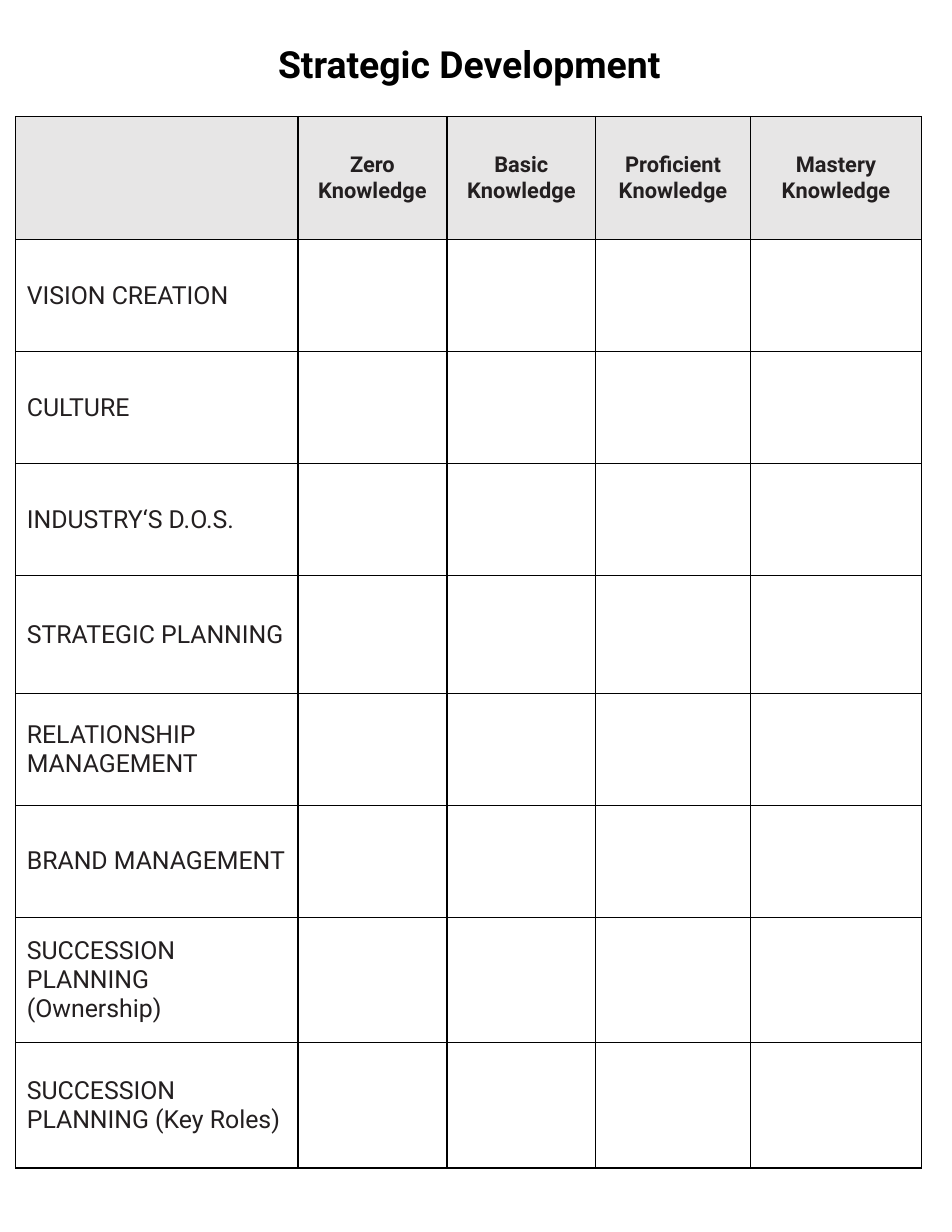
from dataclasses import dataclass

from lxml import etree
from pptx import Presentation
from pptx.dml.color import RGBColor
from pptx.enum.text import MSO_ANCHOR, PP_ALIGN
from pptx.oxml.ns import qn
from pptx.util import Inches, Pt

LEFT, CENTER = PP_ALIGN.LEFT, PP_ALIGN.CENTER
MIDDLE = MSO_ANCHOR.MIDDLE


@dataclass(frozen=True)
class Theme:
    font: str = "Roboto"
    black: str = "000000"
    ink: str = "231F20"
    head: str = "D0CECE"
    alpha: int = 50
    title: int = 24
    label: int = 14
    topic: int = 16
    rule: int = 1


THEME = Theme()
LEVELS = ["Zero", "Basic", "Proficient", "Mastery"]
TOPICS = [
    "VISION CREATION",
    "CULTURE",
    "INDUSTRY‘S D.O.S.",
    "STRATEGIC PLANNING",
    "RELATIONSHIP MANAGEMENT",
    "BRAND MANAGEMENT",
    "SUCCESSION PLANNING (Ownership)",
    "SUCCESSION PLANNING (Key Roles)",
]
COLS = [2.52, 1.33, 1.33, 1.38, 1.53]
ROWS = [1.1, 1, 1, 1, 1.05, 1, 1, 1.12, 1.12]


def write(frame, text, size, color, bold, align, gap=0):
    """Put one styled paragraph in the frame; gap is a share of the type size."""
    para = frame.paragraphs[0]
    para.alignment = align
    para.space_before = Pt(size * gap)
    run = para.add_run()
    run.text = text
    form = {"name": THEME.font, "size": Pt(size), "bold": bold}
    for name, value in form.items():
        setattr(run.font, name, value)
    run.font.color.rgb = RGBColor.from_string(color)


def add_rules(cell):
    props = cell._tc.get_or_add_tcPr()
    for side in ("lnL", "lnR", "lnT", "lnB"):
        line = etree.SubElement(props, qn(f"a:{side}"), w=str(Pt(THEME.rule)))
        fill = etree.SubElement(line, qn("a:solidFill"))
        etree.SubElement(fill, qn("a:srgbClr"), val=THEME.black)


def shade(cell):
    """Give a heading cell its half-clear grey."""
    cell.fill.solid()
    cell.fill.fore_color.rgb = RGBColor.from_string(THEME.head)
    color = cell._tc.tcPr.find(f"{qn('a:solidFill')}/{qn('a:srgbClr')}")
    etree.SubElement(color, qn("a:alpha"), val=str(THEME.alpha * 1000))


def add_title(slide, box):
    frame = slide.shapes.add_textbox(*map(Inches, box)).text_frame
    frame.word_wrap = True
    write(frame, "Strategic Development", THEME.title, THEME.black, True, CENTER)


def add_grid(slide, box):
    shape = slide.shapes.add_table(len(ROWS), len(COLS), *map(Inches, box))
    table = shape.table
    table.first_row = table.horz_banding = False
    for col, width in zip(table.columns, COLS):
        col.width = Inches(width)
    for row, height in zip(table.rows, ROWS):
        row.height = Inches(height)

    for cell in table.iter_cells():
        cell.vertical_anchor = MIDDLE
        add_rules(cell)
        cell.fill.background()
    for cell in table.rows[0].cells:
        shade(cell)

    for i, level in enumerate(LEVELS, 1):
        write(table.cell(0, i).text_frame, f"{level} Knowledge",
              THEME.label, THEME.ink, True, CENTER, 0.2)
    for i, topic in enumerate(TOPICS, 1):
        write(table.cell(i, 0).text_frame, topic,
              THEME.topic, THEME.ink, False, LEFT, 0.2)


def main():
    deck = Presentation()
    deck.slide_width, deck.slide_height = Inches(8.5), Inches(11)
    slide = deck.slides.add_slide(deck.slide_layouts[6])
    add_title(slide, (1.98, 0.32, 4.42, 0.5))
    add_grid(slide, (0.14, 1.04, sum(COLS), sum(ROWS)))
    deck.save("out.pptx")


if __name__ == "__main__":
    main()
